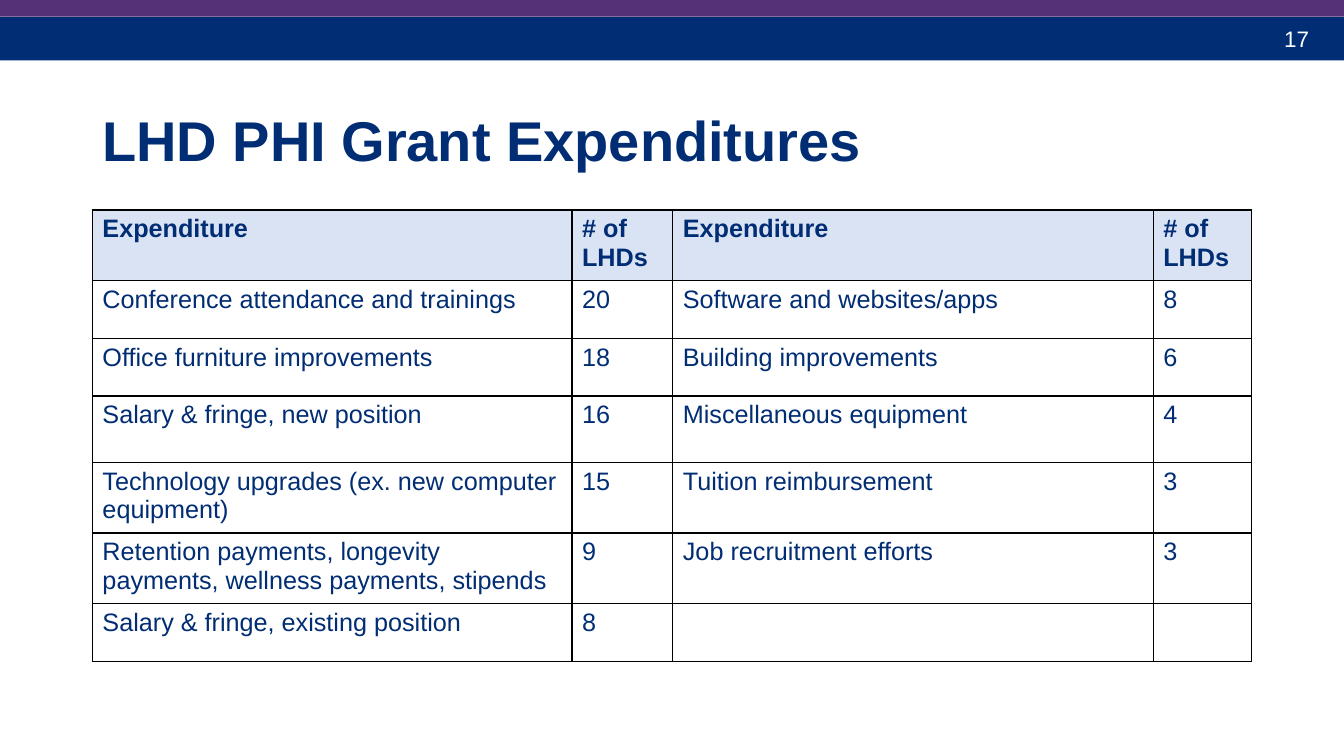
from dataclasses import dataclass

from lxml.etree import SubElement
from pptx import Presentation
from pptx.dml.color import RGBColor as RGB
from pptx.enum.shapes import MSO_SHAPE as SHAPE
from pptx.enum.text import MSO_ANCHOR as ANCHOR, PP_ALIGN as ALIGN
from pptx.oxml.ns import qn
from pptx.util import Inches, Pt


@dataclass(frozen=True)
class Theme:
    navy: str = "002D73"
    purple: str = "553278"
    white: str = "FFFFFF"
    header: str = "DAE3F3"
    border: str = "000000"
    font: str = "Arial"
    title: int = 40
    body: int = 18
    number: int = 16


class Deck:
    COLUMNS, ROWS = 160, 90

    def __init__(self, theme):
        self.theme = theme
        self.prs = Presentation()
        self.prs.slide_width, self.prs.slide_height = Inches(13.33), Inches(7.5)
        self.s = self.prs.slides.add_slide(self.prs.slide_layouts[6])

    def x(self, columns):
        return round(self.prs.slide_width * columns / self.COLUMNS)

    def y(self, rows):
        return round(self.prs.slide_height * rows / self.ROWS)

    def box(self, left, top, width, height):
        return self.x(left), self.y(top), self.x(width), self.y(height)

    def style(self, p, size, color, bold=False):
        for r in p.runs:
            r.font.name, r.font.size, r.font.bold = self.theme.font, Pt(size), bold
            r.font.color.rgb = RGB.from_string(color)

    def band(self, top, height, color):
        sp = self.s.shapes.add_shape(SHAPE.RECTANGLE, *self.box(0, top, self.COLUMNS, height))
        sp.shadow.inherit = False
        sp.fill.solid()
        sp.fill.fore_color.rgb = RGB.from_string(color)
        sp.line.fill.background()

    def text(self, text, box, size, color, bold=False, align=ALIGN.LEFT, anchor=ANCHOR.TOP, spacing=1.0):
        tf = self.s.shapes.add_textbox(*self.box(*box)).text_frame
        tf.word_wrap = True
        tf.vertical_anchor = anchor
        p = tf.paragraphs[0]
        p.text, p.alignment, p.line_spacing = text, align, spacing
        self.style(p, size, color, bold)

    def outline(self, cell):
        tcPr = cell._tc.get_or_add_tcPr()
        for side in ("lnL", "lnR", "lnT", "lnB"):
            ln = SubElement(tcPr, qn(f"a:{side}"), w=str(Pt(1)))
            fill = SubElement(ln, qn("a:solidFill"))
            SubElement(fill, qn("a:srgbClr"), val=self.theme.border)

    def table(self, data, left, top, widths, heights):
        box = self.box(left, top, sum(widths), sum(heights))
        table = self.s.shapes.add_table(len(heights), len(widths), *box).table
        table.horz_banding = False
        for column, width in zip(table.columns, widths):
            column.width = self.x(width)
        for row, height in zip(table.rows, heights):
            row.height = self.y(height)
        for i, values in enumerate(data):
            for j, value in enumerate(values):
                cell = table.cell(i, j)
                self.outline(cell)
                if i == 0:
                    cell.fill.solid()
                    cell.fill.fore_color.rgb = RGB.from_string(self.theme.header)
                else:
                    cell.fill.background()
                p = cell.text_frame.paragraphs[0]
                p.text = value
                self.style(p, self.theme.body, self.theme.navy, i == 0)


EXPENDITURES = [
    ("Expenditure", "# of LHDs", "Expenditure", "# of LHDs"),
    ("Conference attendance and trainings", "20", "Software and websites/apps", "8"),
    ("Office furniture improvements", "18", "Building improvements", "6"),
    ("Salary & fringe, new position", "16", "Miscellaneous equipment", "4"),
    ("Technology upgrades (ex. new computer equipment)", "15", "Tuition reimbursement", "3"),
    ("Retention payments, longevity\npayments, wellness payments, stipends", "9",
     "Job recruitment efforts", "3"),
    ("Salary & fringe, existing position", "8", "", ""),
]


def main():
    theme = Theme()
    deck = Deck(theme)
    deck.band(2, 5.2, theme.navy)
    deck.band(0, 2, theme.purple)
    deck.text("17", (113.2, 2.4, 43.8, 4.4), theme.number, theme.white, align=ALIGN.RIGHT)
    deck.text("LHD PHI Grant Expenditures", (11, 10.2, 138, 13.8), theme.title, theme.navy,
              bold=True, anchor=ANCHOR.MIDDLE, spacing=0.9)
    single, double = 6.87, 7.9
    deck.table(EXPENDITURES, 11, 25, (57.1, 12, 57.2, 11.7),
               (double, single, single, double, double, double, single))
    deck.prs.save("out.pptx")


if __name__ == "__main__":
    main()
